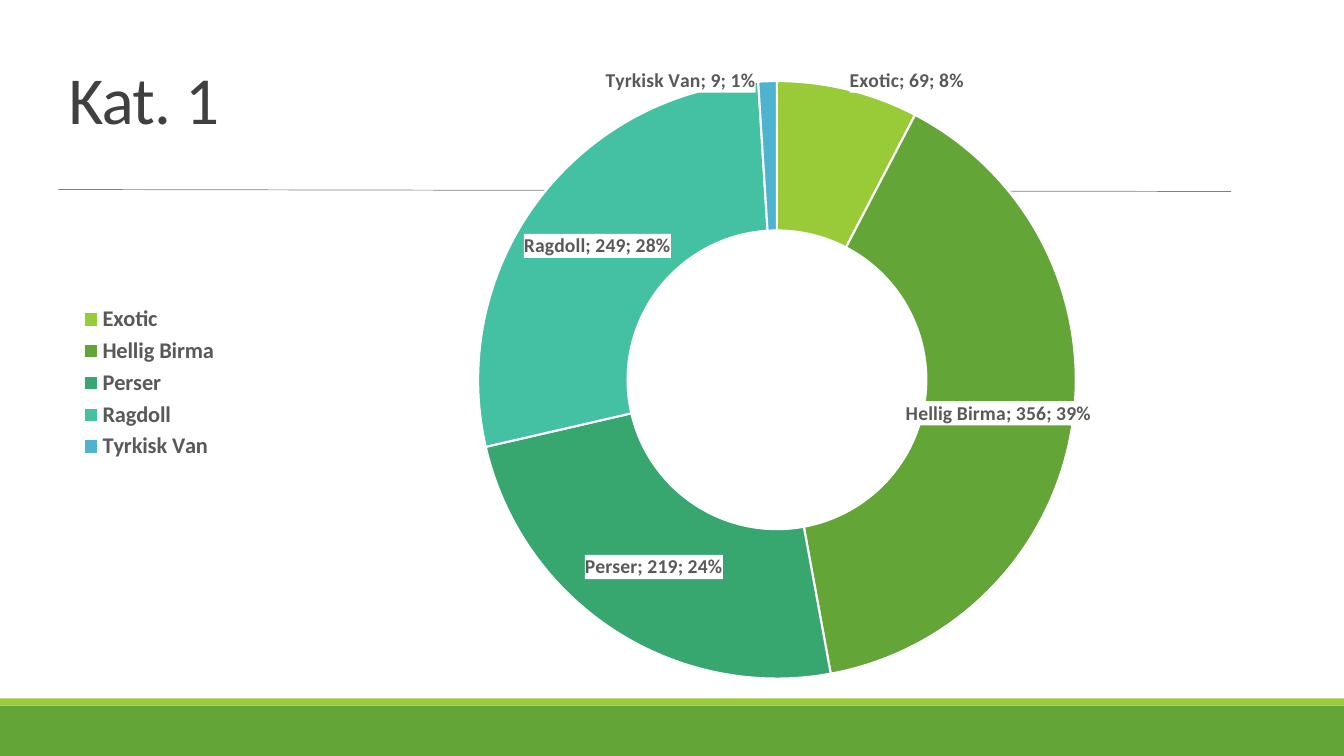
from copy import deepcopy

from lxml import etree
from pptx import Presentation
from pptx.chart.data import CategoryChartData
from pptx.dml.color import RGBColor
from pptx.enum.chart import XL_CHART_TYPE, XL_LEGEND_POSITION
from pptx.enum.shapes import MSO_CONNECTOR, MSO_SHAPE
from pptx.enum.text import MSO_ANCHOR, PP_ALIGN
from pptx.oxml import parse_xml
from pptx.oxml.ns import nsdecls, qn
from pptx.util import Inches, Pt

DOUGHNUT = XL_CHART_TYPE.DOUGHNUT
LEGEND_LEFT = XL_LEGEND_POSITION.LEFT
RECTANGLE = MSO_SHAPE.RECTANGLE
STRAIGHT = MSO_CONNECTOR.STRAIGHT
MIDDLE = MSO_ANCHOR.MIDDLE
LEFT = PP_ALIGN.LEFT

TITLE = "Kat. 1"
BREEDS = [
    ("Exotic", 69, "99CB38"),
    ("Hellig Birma", 356, "63A537"),
    ("Perser", 219, "37A76F"),
    ("Ragdoll", 249, "44C1A3"),
    ("Tyrkisk Van", 9, "4EB3CF"),
]
LABEL_SHIFTS = {0: (0.06, -0.13), 4: (-0.07, -0.12)}

SLIDE_SIZE = (13.33, 7.5)
BANDS = [(7, 0.5, "63A537"), (6.93, 0.07, "99CB38")]
RULE = (0.58, 1.88, 12.21, 1.9)
TITLE_BOX = (0.58, 0.31, 11.62, 1.45)
CHART_BOX = (0.68, 0.68, 12.66, 6.24)
RING_BOX = (4.7, 0.83, 5.95, 5.95)
HOLE_PERCENT = 35

THEME = {
    "font": "Calibri",
    "white": "FFFFFF",
    "title": "404040",
    "text": "595959",
    "rule": "808080",
    "title_size": 48,
    "legend_size": 16,
    "label_size": 14,
}


def color(value):
    return RGBColor.from_string(value)


def format_font(font, size, fill, bold):
    formats = {"name": THEME["font"], "size": Pt(size), "bold": bold}
    for name, value in formats.items():
        setattr(font, name, value)
    font.color.rgb = color(fill)


def add_title(slide):
    title = slide.shapes.title
    for name, value in zip(("left", "top", "width", "height"), TITLE_BOX):
        setattr(title, name, Inches(value))
    title.text_frame.text = TITLE
    title.text_frame.vertical_anchor = MIDDLE
    para = title.text_frame.paragraphs[0]
    para.alignment = LEFT
    para.line_spacing = 0.85
    span = para.runs[0]
    format_font(span.font, THEME["title_size"], THEME["title"], False)
    span.font._element.set("spc", "-50")


def add_decoration(slide):
    for top, height, fill in BANDS:
        band = slide.shapes.add_shape(
            RECTANGLE, 0, Inches(top), Inches(SLIDE_SIZE[0]), Inches(height)
        )
        band.shadow.inherit = False
        band.fill.solid()
        band.fill.fore_color.rgb = color(fill)
        band.line.fill.background()
    rule = slide.shapes.add_connector(STRAIGHT, *map(Inches, RULE))
    rule.line.color.rgb = color(THEME["rule"])
    rule.line.width = Pt(0.5)
    etree.SubElement(rule._element.spPr, qn("a:effectLst"))


def layout_xml(values, target=""):
    modes = '<c:xMode val="edge"/><c:yMode val="edge"/>' if target else ""
    places = "".join(f'<c:{name} val="{value:.2f}"/>' for name, value in values)
    return parse_xml(
        f"<c:layout {nsdecls('c')}><c:manualLayout>{target}{modes}{places}"
        "</c:manualLayout></c:layout>"
    )


def place_ring(chart):
    left, top, width, height = CHART_BOX
    ring_left, ring_top, ring_width, ring_height = RING_BOX
    values = [
        ("x", (ring_left - left) / width),
        ("y", (ring_top - top) / height),
        ("w", ring_width / width),
        ("h", ring_height / height),
    ]
    plot_area = chart._chartSpace.chart.plotArea
    for layout in plot_area.findall(qn("c:layout")):
        plot_area.remove(layout)
    plot_area.insert(0, layout_xml(values, '<c:layoutTarget val="inner"/>'))
    plot_area.find(".//" + qn("c:holeSize")).set("val", str(HOLE_PERCENT))


def add_labels(series):
    labels = series.data_labels
    shown = {"show_value": True, "show_percentage": True, "show_category_name": True}
    for name, value in shown.items():
        setattr(labels, name, value)
    format_font(labels.font, THEME["label_size"], THEME["text"], True)
    group = labels._element
    group.find(qn("c:txPr")).addprevious(parse_xml(
        f"<c:spPr {nsdecls('c', 'a')}><a:solidFill>"
        f'<a:srgbClr val="{THEME["white"]}"/></a:solidFill></c:spPr>'
    ))
    group.find(qn("c:showBubbleSize")).addnext(
        parse_xml(f"<c:separator {nsdecls('c')}>; </c:separator>")
    )
    shared = [part for part in group if part.tag != qn("c:showLeaderLines")]
    for position, (index, shift) in enumerate(LABEL_SHIFTS.items()):
        label = parse_xml(f'<c:dLbl {nsdecls("c")}><c:idx val="{index}"/></c:dLbl>')
        label.append(layout_xml(zip("xy", shift)))
        for part in shared:
            label.append(deepcopy(part))
        group.insert(position, label)


def add_breed_chart(slide):
    data = CategoryChartData()
    data.categories = [name for name, _, _ in BREEDS]
    data.add_series("Series 1", [count for _, count, _ in BREEDS])
    chart = slide.shapes.add_chart(DOUGHNUT, *map(Inches, CHART_BOX), data).chart
    chart.has_title = False
    chart.has_legend = True
    chart.legend.position = LEGEND_LEFT
    chart.legend.include_in_layout = False
    format_font(chart.legend.font, THEME["legend_size"], THEME["text"], True)
    series = chart.plots[0].series[0]
    for index, (_, _, fill) in enumerate(BREEDS):
        slice_format = series.points[index].format
        slice_format.fill.solid()
        slice_format.fill.fore_color.rgb = color(fill)
        slice_format.line.color.rgb = color(THEME["white"])
        slice_format.line.width = Pt(1.5)
    add_labels(series)
    place_ring(chart)


def main():
    deck = Presentation()
    deck.slide_width, deck.slide_height = map(Inches, SLIDE_SIZE)
    page = deck.slides.add_slide(deck.slide_layouts[5])
    add_decoration(page)
    add_title(page)
    add_breed_chart(page)
    deck.save("out.pptx")


if __name__ == "__main__":
    main()
